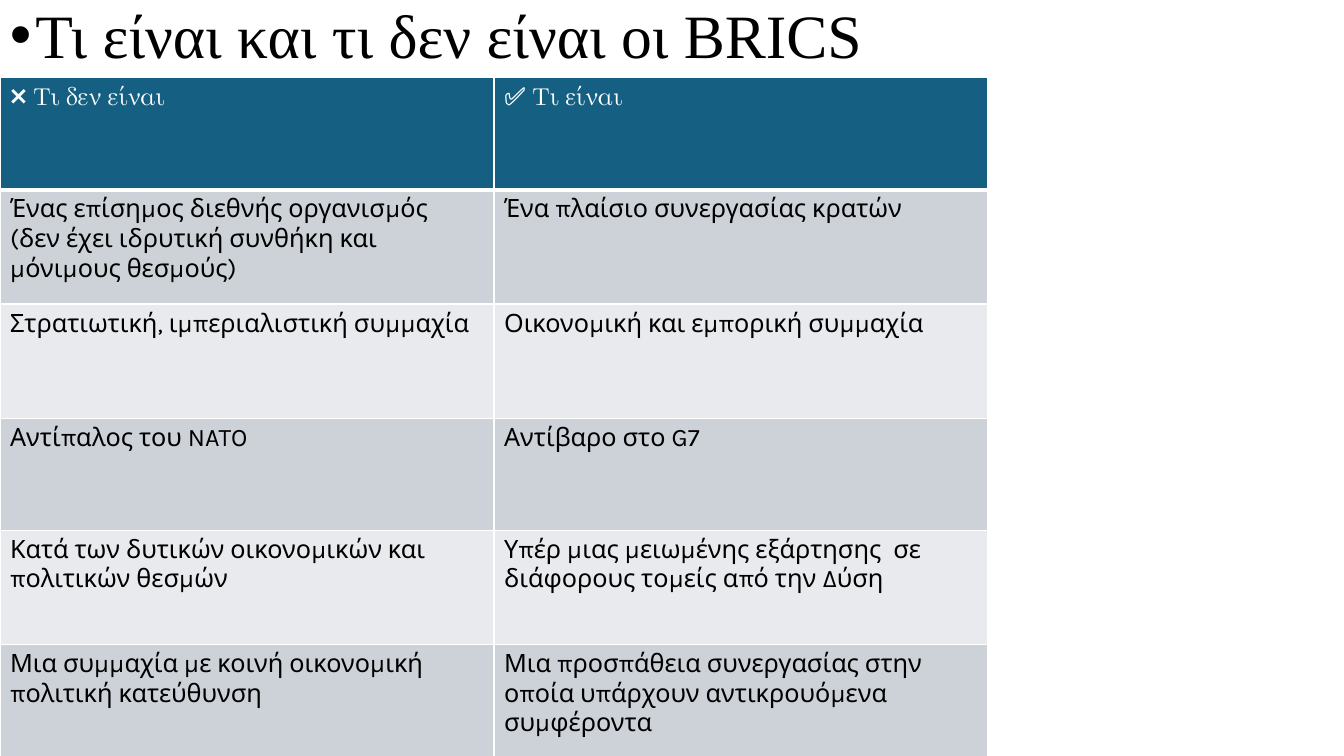
from lxml import etree
from pptx import Presentation
from pptx.dml.color import RGBColor
from pptx.enum.text import MSO_ANCHOR
from pptx.oxml.ns import qn
from pptx.util import Cm, Pt

TOP = MSO_ANCHOR.TOP

TITLE = "Τι είναι και τι δεν είναι οι BRICS"
ROWS = [
    ("❌ Τι δεν είναι", "✅ Τι είναι"),
    ("Ένας επίσημος διεθνής οργανισμός (δεν έχει ιδρυτική συνθήκη και μόνιμους θεσμούς)",
     "Ένα πλαίσιο συνεργασίας κρατών"),
    ("Στρατιωτική, ιμπεριαλιστική συμμαχία", "Οικονομική και εμπορική συμμαχία"),
    ("Αντίπαλος του NATO", "Αντίβαρο στο G7"),
    ("Κατά των δυτικών οικονομικών και πολιτικών θεσμών",
     "Υπέρ μιας μειωμένης εξάρτησης  σε διάφορους τομείς από την Δύση"),
    ("Μια συμμαχία με κοινή οικονομική πολιτική κατεύθυνση",
     "Μια προσπάθεια συνεργασίας στην οποία υπάρχουν αντικρουόμενα συμφέροντα"),
]
ROW_HEIGHTS = [2.82, 2.88, 2.88, 2.82, 2.88, 2.82]
COLUMN_WIDTH = 12.45
TABLE_TOP = 1.96
HEADER_FILL = "156082"
BAND_FILLS = ("E8EAED", "CCD2D8")
WHITE, BLACK = "FFFFFF", "000000"


def color(value):
    return RGBColor.from_string(value)


def add_run(paragraph, text, font_name, size, text_color, bold=False):
    run = paragraph.add_run()
    run.text = text
    run.font.name = font_name
    run.font.size = Pt(size)
    run.font.bold = bold
    run.font.color.rgb = color(text_color)


def set_borders(cell, bottom_width, top_width):
    """Draw white lines on all four sides, ahead of the cell fill."""
    properties = cell._tc.get_or_add_tcPr()
    sides = {"a:lnL": 1, "a:lnR": 1, "a:lnT": top_width, "a:lnB": bottom_width}
    for position, (tag, width) in enumerate(sides.items()):
        line = etree.Element(qn(tag), w=str(Pt(width)))
        fill = etree.SubElement(line, qn("a:solidFill"))
        etree.SubElement(fill, qn("a:srgbClr"), val=WHITE)
        properties.insert(position, line)


def add_title(slide):
    shape = slide.shapes.add_textbox(0, 0, Cm(31.55), Cm(2.51))
    frame = shape.text_frame
    frame.word_wrap = True
    frame.vertical_anchor = TOP
    paragraph = frame.paragraphs[0]
    properties = paragraph._p.get_or_add_pPr()
    indent = Cm(0.64)
    properties.set("marL", str(indent))
    properties.set("indent", str(-indent))
    etree.SubElement(properties, qn("a:buFont"), typeface="Arial")
    etree.SubElement(properties, qn("a:buChar"), char="•")
    paragraph.line_spacing = 0.9
    add_run(paragraph, TITLE, "Times New Roman", 44, BLACK)


def add_comparison(slide):
    table = slide.shapes.add_table(
        len(ROWS), 2, 0, Cm(TABLE_TOP), Cm(2 * COLUMN_WIDTH), Cm(sum(ROW_HEIGHTS))
    ).table
    for column in table.columns:
        column.width = Cm(COLUMN_WIDTH)
    for row_index, (texts, height) in enumerate(zip(ROWS, ROW_HEIGHTS)):
        table.rows[row_index].height = Cm(height)
        is_header = row_index == 0
        fill = HEADER_FILL if is_header else BAND_FILLS[row_index % 2]
        for column_index, text in enumerate(texts):
            cell = table.cell(row_index, column_index)
            cell.fill.solid()
            cell.fill.fore_color.rgb = color(fill)
            set_borders(cell, 3 if is_header else 1, 3 if row_index == 1 else 1)
            add_run(cell.text_frame.paragraphs[0], text, "Karla", 18,
                    WHITE if is_header else BLACK, is_header)


def main():
    presentation = Presentation()
    presentation.slide_width = Cm(33.87)
    presentation.slide_height = Cm(19.05)
    slide = presentation.slides.add_slide(presentation.slide_layouts[6])
    add_title(slide)
    add_comparison(slide)
    presentation.save("out.pptx")


if __name__ == "__main__":
    main()
